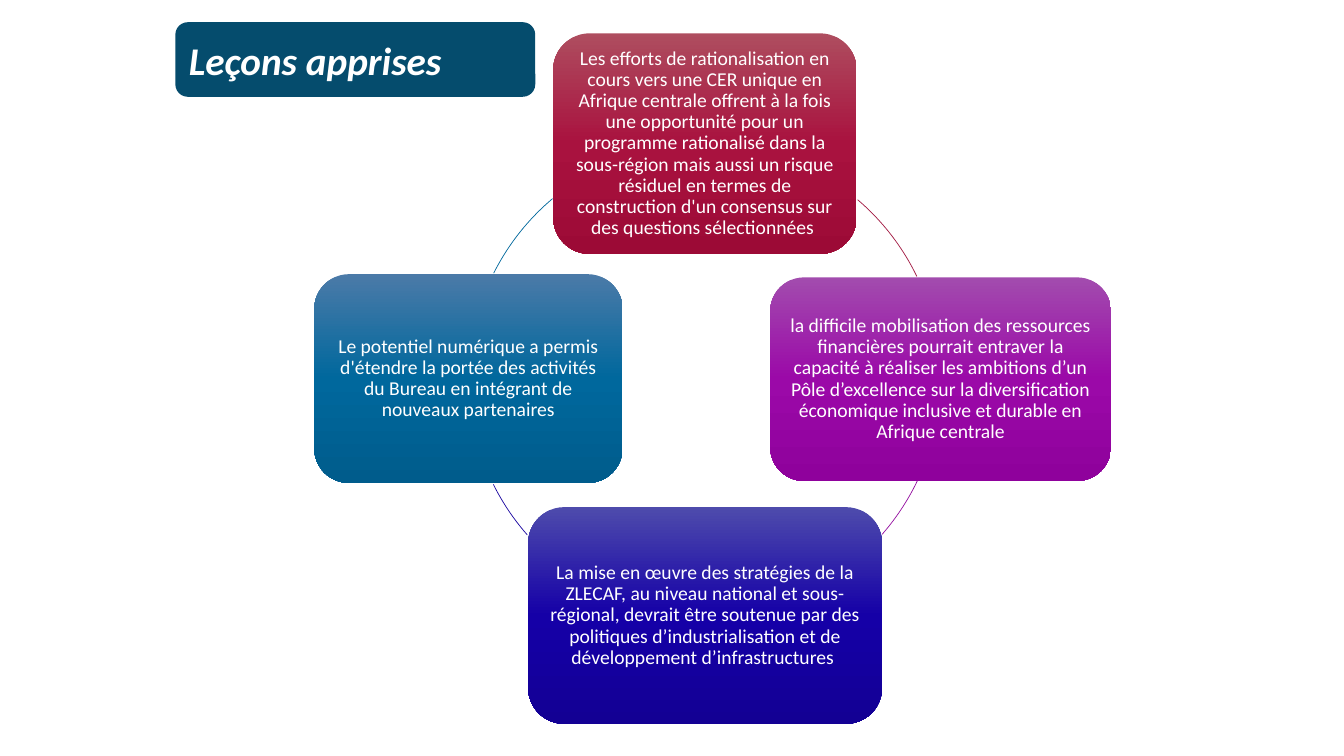
import copy

import pptx
import pptx.dml.color
import pptx.enum.shapes
import pptx.enum.text
import pptx.oxml.ns
import pptx.util

Cm = pptx.util.Cm
Pt = pptx.util.Pt
SHAPES = pptx.enum.shapes.MSO_SHAPE
ALIGN = pptx.enum.text.PP_ALIGN

COLOURS = {
    "white": "FFFFFF",
    "title": "054C6D",
    "red": ("AE4D5F", "A9123F", "9C0A36"),
    "purple": ("A24CAE", "9B09A8", "8F019C"),
    "indigo": ("4E4BAC", "1500A7", "130094"),
    "blue": ("4B7AA8", "00689D", "005C8C"),
    "red arc": "A21942",
    "purple arc": "9510A1",
    "indigo arc": "1B07A0",
    "blue arc": "00689D",
}

# Left, top and diameter of the circle that links the lessons, in cm
CIRCLE = (11.81, 3.61, 11.89)

# Colour, box (left, top, width, height in cm), start and end of the next arc
# (degrees clockwise from the right), text
LESSONS = [
    ("red", (13.94, 0.84, 7.65, 5.56), (310.5, 334.2),
     "Les efforts de rationalisation en cours vers une CER unique en Afrique "
     "centrale offrent à la fois une opportunité pour un programme rationalisé "
     "dans la sous-région mais aussi un risque résiduel en termes de "
     "construction d'un consensus sur des questions sélectionnées "),
    ("purple", (19.41, 6.99, 8.59, 5.13), (25.6, 41.2),
     "la difficile mobilisation des ressources financières pourrait entraver la "
     "capacité à réaliser les ambitions d’un Pôle d’excellence sur la "
     "diversification économique inclusive et durable en Afrique centrale"),
    ("indigo", (13.31, 12.78, 8.92, 5.46), (138.7, 153.5),
     "La mise en œuvre des stratégies de la ZLECAF, au niveau national et "
     "sous-régional, devrait être soutenue par des politiques "
     "d’industrialisation et de développement d’infrastructures "),
    ("blue", (7.92, 6.91, 7.77, 5.26), (206.7, 229.9),
     "Le potentiel numérique a permis d'étendre la portée des activités du "
     "Bureau en intégrant de nouveaux partenaires"),
]


def rgb(value):
    return pptx.dml.color.RGBColor.from_string(value)


def write_text(shape, text, size, align, inset, bold=False, italic=False,
               line_spacing=1.0):
    frame = shape.text_frame
    frame.word_wrap = True
    frame.vertical_anchor = pptx.enum.text.MSO_ANCHOR.MIDDLE
    frame.margin_left = frame.margin_right = Cm(inset)
    frame.margin_top = frame.margin_bottom = Cm(inset)
    paragraph = frame.paragraphs[0]
    paragraph.alignment = align
    paragraph.line_spacing = line_spacing
    run = paragraph.add_run()
    run.text = text
    run.font.name = "Calibri"
    run.font.size = Pt(size)
    run.font.bold = bold
    run.font.italic = italic
    run.font.color.rgb = rgb(COLOURS["white"])


def add_rounded_box(slide, box):
    shape = slide.shapes.add_shape(SHAPES.ROUNDED_RECTANGLE,
                                   *(Cm(length) for length in box))
    shape.shadow.inherit = False
    shape.line.fill.background()
    return shape


def fill_downwards(shape, colours):
    """Fill with evenly spaced gradient stops from top to bottom."""
    fill = shape.fill
    fill.gradient()
    fill.gradient_angle = 270
    stop_list = shape._element.spPr.find(".//" + pptx.oxml.ns.qn("a:gsLst"))
    while len(stop_list) < len(colours):
        stop_list.append(copy.deepcopy(stop_list[0]))
    for index, (stop, colour) in enumerate(zip(fill.gradient_stops, colours)):
        stop.position = index / (len(colours) - 1)
        stop.color.rgb = rgb(colour)


def add_title(slide, text):
    title = add_rounded_box(slide, (4.42, 0.56, 9.07, 1.88))
    title.fill.solid()
    title.fill.fore_color.rgb = rgb(COLOURS["title"])
    write_text(title, text, size=28, align=ALIGN.LEFT, inset=0.25,
               bold=True, italic=True)


def add_lesson(slide, text, box, colours):
    lesson = add_rounded_box(slide, box)
    fill_downwards(lesson, colours)
    write_text(lesson, text, size=14, align=ALIGN.CENTER, inset=0.15,
               line_spacing=0.9)


def add_arc(slide, angles, colour):
    left, top, diameter = (Cm(length) for length in CIRCLE)
    arc = slide.shapes.add_shape(SHAPES.ARC, left, top, diameter, diameter)
    arc.shadow.inherit = False
    arc.fill.background()
    arc.line.color.rgb = rgb(colour)
    arc.line.width = Pt(0.5)
    for index, angle in enumerate(angles):
        # Angles are stored in 1/60000 degree, adjustments in 1/100000
        arc.adjustments[index] = angle * 0.6


def main():
    presentation = pptx.Presentation()
    presentation.slide_width = Cm(33.87)
    presentation.slide_height = Cm(19.05)
    slide = presentation.slides.add_slide(presentation.slide_layouts[6])
    add_title(slide, "Leçons apprises")
    for name, box, angles, text in LESSONS:
        add_lesson(slide, text, box, COLOURS[name])
        add_arc(slide, angles, COLOURS[name + " arc"])
    presentation.save("out.pptx")


if __name__ == "__main__":
    main()
